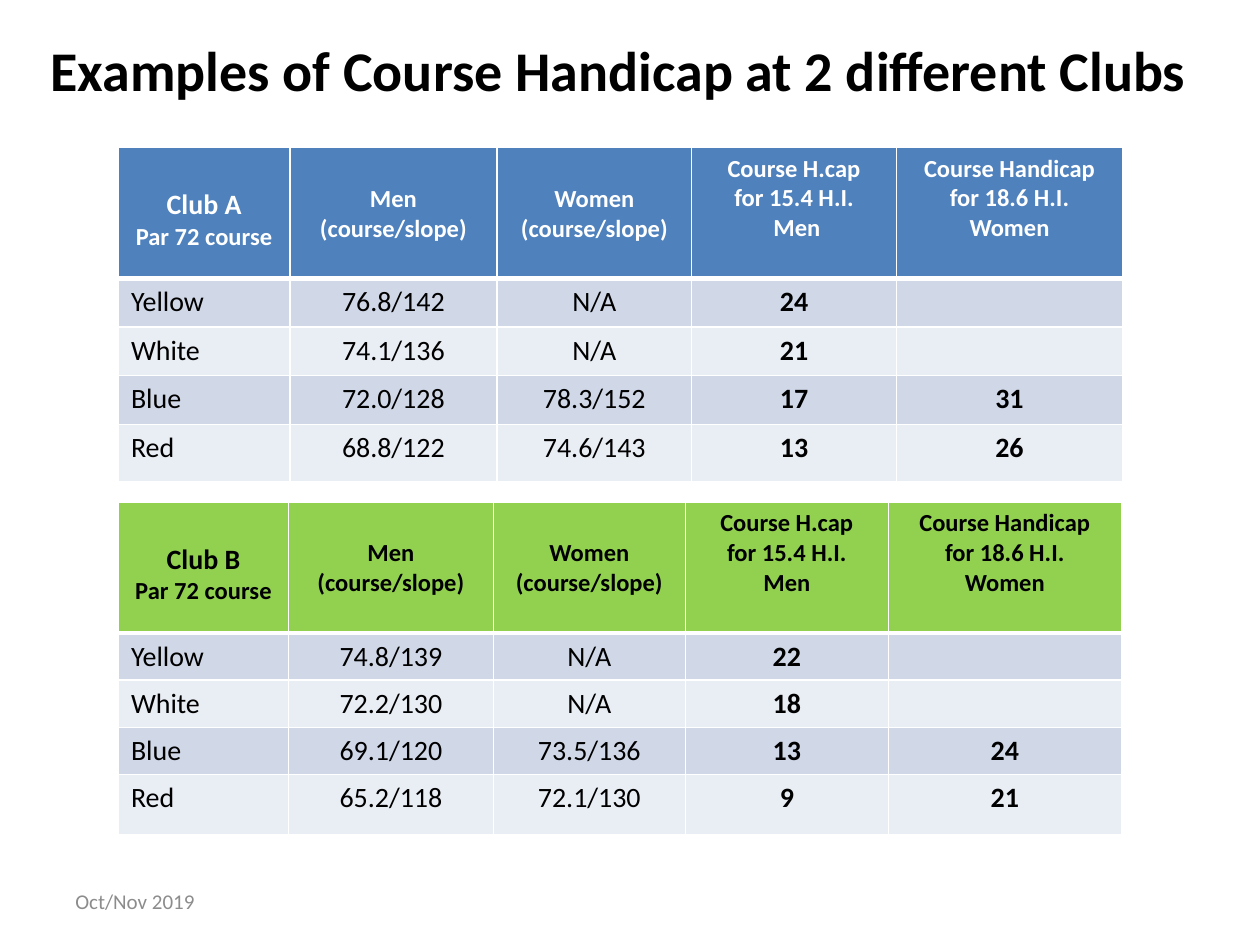
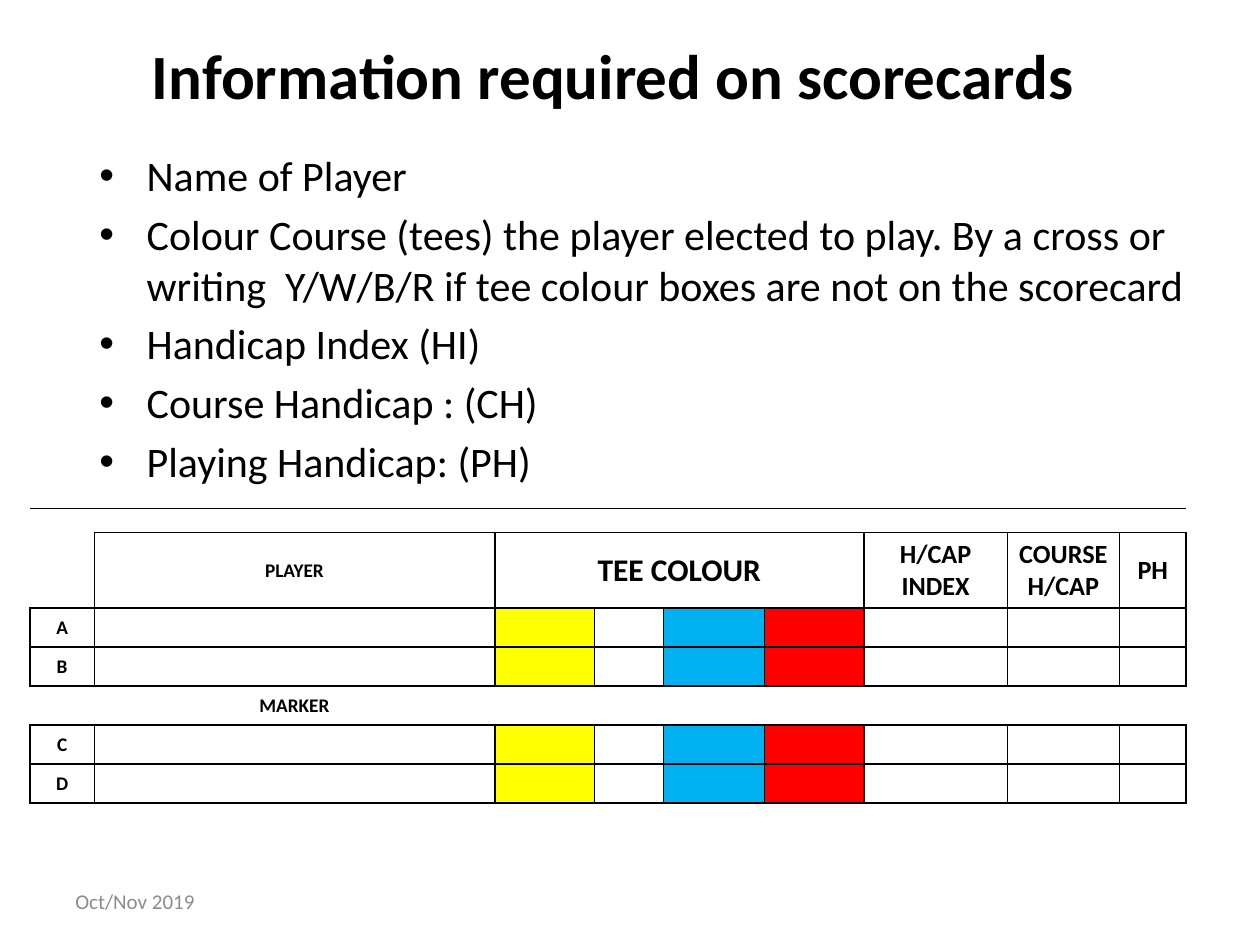
from dataclasses import dataclass
from itertools import accumulate
from typing import Any, NamedTuple, Optional

from lxml.etree import SubElement
from pptx import Presentation
from pptx.dml.color import RGBColor
from pptx.enum.text import MSO_ANCHOR, MSO_AUTO_SIZE, PP_ALIGN
from pptx.oxml.ns import qn
from pptx.util import Emu, Inches, Pt


# Theme and grid
@dataclass(frozen=True)
class Theme:
    font: str = "Calibri"
    ink: str = "000000"
    paper: str = "FFFFFF"
    muted: str = "8C8C8C"
    blue: str = "4F81BD"
    green: str = "92D050"
    bands: tuple[str, str] = ("D0D8E8", "E9EDF4")
    tees: tuple[str, ...] = ("FFFF00", "FFFFFF", "00B0F0", "FF0000")
    long_title: float = 32
    title: float = 36
    body: float = 24
    tee_head: float = 18
    cell: float = 16
    card_head: float = 15
    head: float = 14
    date: float = 12
    label: float = 11
    spacer: float = 8


T = Theme()
SLIDE_W, SLIDE_H = Inches(10), Inches(7.5)
UNIT = SLIDE_W / 100  # the slide is a grid of 100 columns by 75 rows


def grid(n: float) -> Emu:
    return Emu(round(n * UNIT))


class Box(NamedTuple):
    left: float
    top: float
    width: float
    height: float

    def place(self, shape: Any) -> None:
        for name, n in self._asdict().items():
            setattr(shape, name, grid(n))


class Line(NamedTuple):
    text: str
    size: float
    bold: bool = False
    color: str = T.ink


@dataclass(frozen=True)
class CellStyle:
    fill: str
    edge: str
    sides: str = "LRTB"
    bottom: float = 1
    align: Any = PP_ALIGN.CENTER
    anchor: Any = MSO_ANCHOR.TOP
    inset: tuple[float, float, float, float] = (1, 1, 0.5, 0.5)  # left, right, top, bottom
    empty: float = T.cell


@dataclass(frozen=True)
class Club:
    name: str
    box: Box
    cols: tuple[float, ...]
    rows: tuple[float, ...]
    fill: str
    ink: str
    last_heads: tuple[tuple[str, ...], ...]
    data: tuple[tuple[str, ...], ...]


CLUBS = (
    Club("Club A", Box(9.4, 11.7, 79.7, 26.5), (13.6, 16.45, 15.45, 16.25, 17.95),
         (10.4, 3.86, 3.86, 3.86, 4.55), T.blue, T.paper,
         (("Course H.cap", "for 15.4 H.I.", " Men"),
          ("Course Handicap for 18.6 H.I.", "Women")),
         (("Yellow", "76.8/142", "N/A", "24", ""),
          ("White", "74.1/136", "N/A", "21", ""),
          ("Blue", "72.0/128", "78.3/152", "17", "31"),
          ("Red", "68.8/122", "74.6/143", "13", "26"))),
    Club("Club B", Box(9.4, 39.85, 79.6, 26.4), (13.5, 16.25, 15.25, 16.1, 18.5),
         (10.4, 3.74, 3.74, 3.74, 4.8), T.green, T.ink,
         (("Course H.cap", "for 15.4 H.I.", "Men"),
          ("Course Handicap", "for 18.6 H.I.", "Women")),
         (("Yellow", "74.8/139", "N/A", "22", ""),
          ("White", "72.2/130", "N/A", "18", ""),
          ("Blue", "69.1/120", "73.5/136", "13", "24"),
          ("Red", "65.2/118", "72.1/130", "9", "21"))),
)
FIRST_HEADS = (("Par 72 course",), ("Men", "(course/slope)"), ("Women", "(course/slope)"))
HEAD_TOPS = (3.2, 2.9, 2.9, 0.5, 0.5)

REQUIRED = (
    "Name of Player",
    "Colour Course (tees) the player elected to play. By a cross or "
    "writing  Y/W/B/R if tee colour boxes are not on the scorecard",
    "Handicap Index (HI)",
    "Course Handicap : (CH)",
    "Playing Handicap: (PH)",
)
CARD_BOX = Box(2.38, 40.35, 91.6, 23.4)
CARD_COLS = (5.1, 4.1, 12.9, 5.7, 5.7, 3.4, 7.9, 5.5, 8, 1.5, 5.7, 0.7, 10.8, 0.5, 8.3, 0.4, 5.3)
CARD_ROWS = (1.9, 6) + (3.1,) * 5
# Column spans of each kind of row
SPACER_SPANS = (1,) * 6 + (2, 2) + (1,) * 7
HEAD_SPANS = (1, 5, 6, 2, 2, 1)
PLAYER_SPANS = (1, 5, 1, 1, 1, 3, 2, 2, 1)
MARKER_SPANS = (1, 5, 1, 1, 1, 3) + (1,) * 5
CARD_HEADS = (None, ("PLAYER", T.label), ("TEE COLOUR", T.tee_head),
              ("H/CAP INDEX", T.card_head), ("COURSE H/CAP", T.card_head),
              ("PH", T.card_head))


class CardRow(NamedTuple):
    spans: tuple[int, ...]
    labels: tuple[Optional[tuple[str, float]], ...] = ()
    first_sides: str = "LRTB"
    sides: str = "LRTB"
    tees: bool = False


def player_row(letter: str) -> CardRow:
    return CardRow(PLAYER_SPANS, ((letter, T.label),), tees=True)


SCORECARD = (
    CardRow(SPACER_SPANS, first_sides="T", sides="TB"),
    CardRow(HEAD_SPANS, CARD_HEADS, first_sides="RB"),
    player_row("A"),
    player_row("B"),
    CardRow(MARKER_SPANS, (None, ("MARKER", T.label)), "TB", "TB"),
    player_row("C"),
    player_row("D"),
)
FIRST_TEE = 2  # place of the first tee colour among a player row's cells


# Text
def write(tf: Any, lines: list[Line], align: Any) -> None:
    for i, line in enumerate(lines):
        p = tf.paragraphs[0] if i == 0 else tf.add_paragraph()
        p.alignment = align
        r = p.add_run()
        r.text = line.text
        for name, value in {"name": T.font, "size": Pt(line.size), "bold": line.bold}.items():
            setattr(r.font, name, value)
        r.font.color.rgb = RGBColor.from_string(line.color)


def add_text(s: Any, box: Box, lines: list[Line], anchor: Any) -> Any:
    tf = s.shapes.add_textbox(*map(grid, box)).text_frame
    tf.word_wrap, tf.vertical_anchor = True, anchor
    write(tf, lines, PP_ALIGN.LEFT)
    return tf


def add_slide(prs: Any, title: str, box: Box, size: float) -> Any:
    s = prs.slides.add_slide(prs.slide_layouts[5])
    box.place(s.shapes.title)
    tf = s.shapes.title.text_frame
    format_values = {"word_wrap": True, "auto_size": MSO_AUTO_SIZE.NONE,
                     "vertical_anchor": MSO_ANCHOR.MIDDLE}
    for name, value in format_values.items():
        setattr(tf, name, value)
    write(tf, [Line(title, size, True)], PP_ALIGN.CENTER)
    add_text(s, Box(5, 69.5, 23.3, 4), [Line("Oct/Nov 2019", T.date, color=T.muted)],
             MSO_ANCHOR.MIDDLE)
    return s


# Tables
def add_grid(s: Any, box: Box, cols: tuple[float, ...], rows: tuple[float, ...]) -> Any:
    table = s.shapes.add_table(len(rows), len(cols), *map(grid, box)).table
    table.first_row = table.horz_banding = False
    for column, n in zip(table.columns, cols):
        column.width = grid(n)
    for row, n in zip(table.rows, rows):
        row.height = grid(n)
    return table


def set_cell(cell: Any, style: CellStyle, lines: Optional[list[Line]] = None) -> None:
    for side, n in zip(("left", "right", "top", "bottom"), style.inset):
        setattr(cell, f"margin_{side}", grid(n))
    cell.vertical_anchor = style.anchor
    tcPr = cell._tc.get_or_add_tcPr()
    for side in "LRTB":
        width = style.bottom if side == "B" else 1
        ln = SubElement(tcPr, qn(f"a:ln{side}"), w=str(Pt(width)))
        if side in style.sides:
            SubElement(SubElement(ln, qn("a:solidFill")), qn("a:srgbClr"), val=style.edge)
        else:
            SubElement(ln, qn("a:noFill"))
    cell.fill.solid()
    cell.fill.fore_color.rgb = RGBColor.from_string(style.fill)
    if lines:
        write(cell.text_frame, lines, style.align)
    else:
        SubElement(cell.text_frame.paragraphs[0]._p, qn("a:endParaRPr"),
                   sz=str(round(style.empty * 100)))


def add_club(s: Any, club: Club) -> None:
    table = add_grid(s, club.box, club.cols, club.rows)
    for c, (texts, top) in enumerate(zip(FIRST_HEADS + club.last_heads, HEAD_TOPS)):
        lines = [Line(text, T.head, True, club.ink) for text in texts]
        if c == 0:
            lines.insert(0, Line(club.name, T.cell, True, club.ink))
        style = CellStyle(club.fill, T.paper, bottom=3, inset=(1, 1, top, 0.5))
        set_cell(table.cell(0, c), style, lines)
    for r, values in enumerate(club.data, 1):
        for c, text in enumerate(values):
            style = CellStyle(T.bands[(r - 1) % 2], T.paper,
                              align=PP_ALIGN.CENTER if c else PP_ALIGN.LEFT)
            set_cell(table.cell(r, c), style, [Line(text, T.cell, c > 2)] if text else None)


def add_scorecard(s: Any) -> None:
    table = add_grid(s, CARD_BOX, CARD_COLS, CARD_ROWS)
    for r, row in enumerate(SCORECARD):
        starts = accumulate(row.spans, initial=0)
        for i, (start, span) in enumerate(zip(starts, row.spans)):
            tee = i - FIRST_TEE
            is_tee = row.tees and 0 <= tee < len(T.tees)
            style = CellStyle(T.tees[tee] if is_tee else T.paper, T.ink,
                              row.sides if i else row.first_sides,
                              anchor=MSO_ANCHOR.MIDDLE, inset=(0.1, 0.1, 0.1, 0),
                              empty=T.spacer)
            label = row.labels[i] if i < len(row.labels) else None
            if span > 1:
                table.cell(r, start).merge(table.cell(r, start + span - 1))
            for c in range(start, start + span):
                shows = label and c == start
                set_cell(table.cell(r, c), style, [Line(*label, True)] if shows else None)


# Bulleted list
def add_bullets(s: Any, box: Box, items: tuple[str, ...]) -> None:
    tf = add_text(s, box, [Line(item, T.body) for item in items], MSO_ANCHOR.TOP)
    for i, p in enumerate(tf.paragraphs):
        if i:
            p.space_before = Pt(T.body * 0.2)
        pPr = p._p.get_or_add_pPr()
        pPr.set("marL", str(grid(3.75)))
        pPr.set("indent", str(-grid(3.75)))
        SubElement(pPr, qn("a:buFont"), typeface="Arial")
        SubElement(pPr, qn("a:buChar"), char="•")


def main() -> None:
    prs = Presentation()
    prs.slide_width, prs.slide_height = SLIDE_W, SLIDE_H

    # Slide 1: course handicaps at two clubs
    s = add_slide(prs, "Examples of Course Handicap at 2 different Clubs",
                  Box(1.05, 2.3, 96.1, 6.3), T.long_title)
    for club in CLUBS:
        add_club(s, club)

    # Slide 2: what the scorecard must show
    s = add_slide(prs, "Information required on scorecards",
                  Box(3.6, 0.45, 90.1, 10.9), T.title)
    add_bullets(s, Box(6.9, 11.4, 91.2, 28), REQUIRED)
    add_scorecard(s)

    prs.save("out.pptx")


if __name__ == "__main__":
    main()
